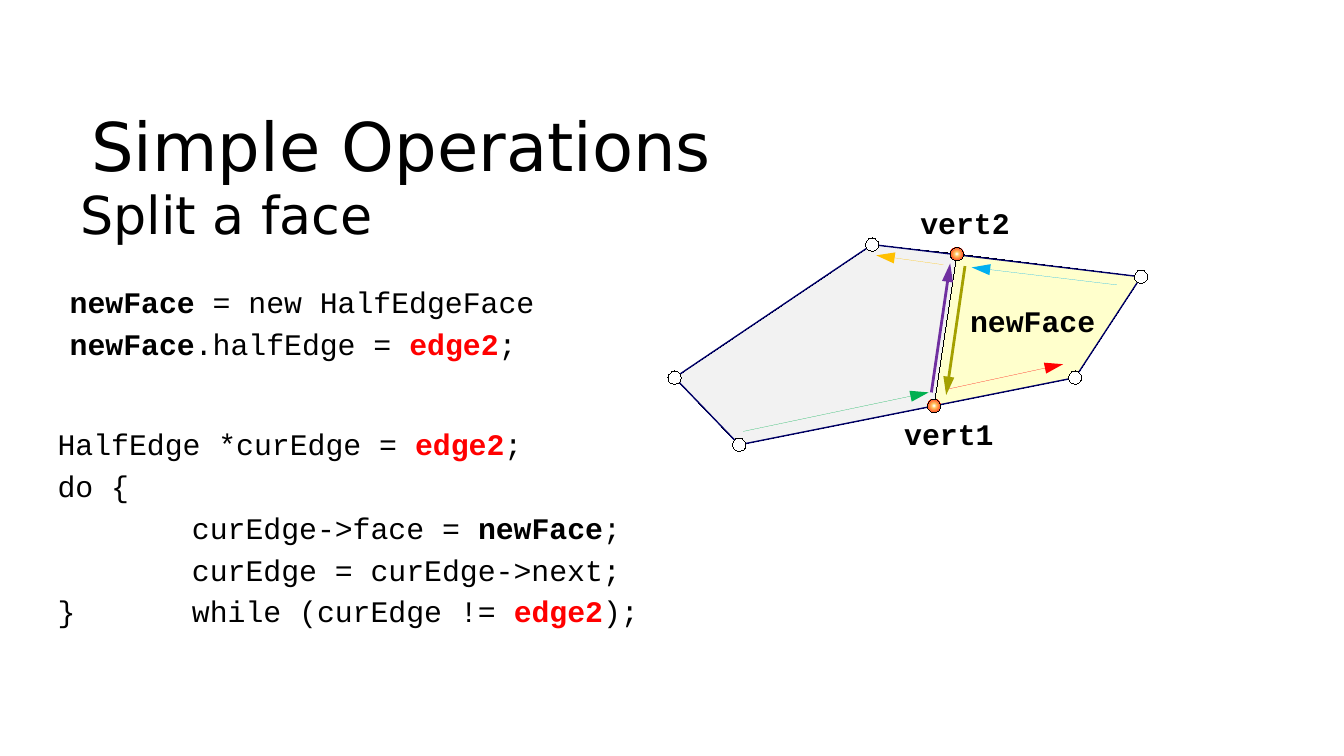
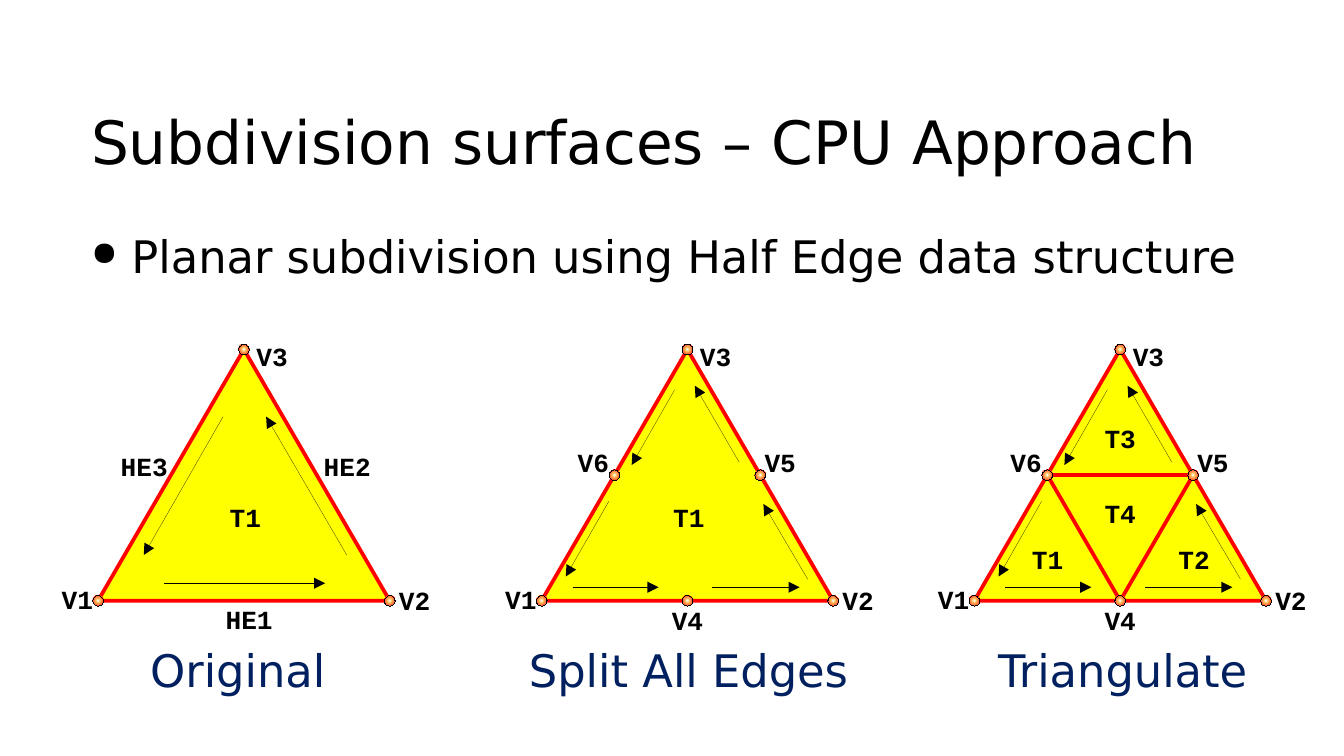
from collections import namedtuple
from dataclasses import dataclass

from lxml import etree
from pptx import Presentation
from pptx.dml.color import RGBColor
from pptx.enum.shapes import MSO_CONNECTOR, MSO_SHAPE
from pptx.enum.text import MSO_ANCHOR, MSO_AUTO_SIZE, PP_ALIGN
from pptx.oxml.ns import qn
from pptx.util import Inches, Pt

LEFT, RIGHT = PP_ALIGN.LEFT, PP_ALIGN.RIGHT
TOP = MSO_ANCHOR.TOP
FIXED, GROW = MSO_AUTO_SIZE.NONE, MSO_AUTO_SIZE.SHAPE_TO_FIT_TEXT
LINE = MSO_CONNECTOR.STRAIGHT
OVAL, TRI = MSO_SHAPE.OVAL, MSO_SHAPE.ISOSCELES_TRIANGLE

WIDTH = Inches(10)
HEIGHT = WIDTH * 9 // 16
COL = WIDTH // 100

Box = namedtuple("Box", "x y w h")


@dataclass(frozen=True)
class Theme:
    """Colours, fonts and type sizes."""
    sans: str = "DejaVu Sans"
    mono: str = "Courier New"
    ink: str = "000000"
    white: str = "FFFFFF"
    red: str = "FF0000"
    navy: str = "000066"
    blue: str = "002060"
    gray: str = "F2F2F2"
    cream: str = "FFFFCC"
    yellow: str = "FFFF00"
    green: str = "00B050"
    cyan: str = "00B0F0"
    gold: str = "FFC000"
    purple: str = "7030A0"
    olive: str = "A4A000"
    glow: tuple = ((1, "FFFFFF"), (21, "FFCC66"), (100, "FF0000"))
    title: int = 36
    long: int = 32
    head: int = 28
    body: int = 24
    code: int = 16
    tag: int = 14


T = Theme()


def sub(node, tag, **attrs):
    """Append a drawing element and return it."""
    return etree.SubElement(node, qn("a:" + tag), {k: str(v) for k, v in attrs.items()})


def shift(box, x, y, w=0, h=0):
    """Return a box set out from the corner of another."""
    return Box(box.x + x, box.y + y, w, h)


def cols(*vals):
    """Turn grid columns into lengths."""
    return [round(v * COL) for v in vals]


def rgb(hue):
    """Turn a hex string into a colour."""
    return RGBColor.from_string(hue)


def stroke(line, hue, width):
    """Set line colour and width, with zero as a hairline."""
    line.color.rgb = rgb(hue)
    node = line._get_or_add_ln()
    node.set("w", str(int(Pt(width))))
    return node


def paint(shape, fill, edge, width):
    """Set the fill and outline of a shape."""
    shape.shadow.inherit = False
    shape.fill.solid()
    shape.fill.fore_color.rgb = rgb(fill)
    stroke(shape.line, edge, width)
    return shape


def write(slide, box, lines, size, font=T.mono, color=T.ink, bold=False,
          align=LEFT, wrap=True, gap=3.2, bullet=None, tab=None):
    """Write lines, each a string or a list of (text, bold, colour) runs."""
    frame = slide.shapes.add_textbox(*cols(*box)).text_frame
    frame.word_wrap = wrap
    frame.auto_size = FIXED if wrap else GROW
    frame.vertical_anchor = TOP
    for i, line in enumerate([lines] if isinstance(lines, str) else lines):
        para = frame.paragraphs[0] if i == 0 else frame.add_paragraph()
        para.alignment = align
        if i:
            para.space_before = Pt(gap)
        props = para._p.get_or_add_pPr()
        if bullet:
            props.set("marL", str(Inches(0.3)))
            props.set("indent", str(-Inches(0.3)))
            sub(sub(props, "buClr"), "srgbClr", val=color)
            sub(props, "buSzPct", val=75000)
            sub(props, "buChar", char=bullet)
        if tab:
            sub(sub(props, "tabLst"), "tab", pos=cols(tab)[0], algn="l")
        for words, heavy, hue in [(line, bold, color)] if isinstance(line, str) else line:
            run = para.add_run()
            run.text = words
            run.font.name = font
            run.font.size = Pt(size)
            run.font.bold = heavy
            run.font.color.rgb = rgb(hue)


def tag(slide, box, words, at, size=T.tag, w=4.5):
    """Write a bold label near a part of a figure."""
    write(slide, shift(box, *at, w, 4.1), words, size, bold=True)


def head(slide, words, size):
    """Write the slide title."""
    write(slide, Box(5.8, 7.3, 88.3, 8.5), words, size, font=T.sans)


def link(slide, box, start, end, color=T.ink, width=0, tip=None):
    """Draw a line, with an arrowhead of the given length if any."""
    a, b = shift(box, *start), shift(box, *end)
    line = slide.shapes.add_connector(LINE, *cols(a.x, a.y, b.x, b.y))
    node = stroke(line.line, color, width)
    if tip:
        sub(node, "tailEnd", type="triangle", w="med", len=tip)
    sub(line._element.spPr, "effectLst")


def dot(slide, box, at, size, glow=True):
    """Draw a vertex centred on a point."""
    spot = shift(box, at[0] - size / 2, at[1] - size / 2, size, size)
    shape = paint(slide.shapes.add_shape(OVAL, *cols(*spot)), T.white, T.ink, 0)
    if glow:
        old = shape._element.spPr.find(qn("a:solidFill"))
        grad = etree.Element(qn("a:gradFill"), rotWithShape="1")
        stops = sub(grad, "gsLst")
        for pos, hue in T.glow:
            sub(sub(stops, "gs", pos=pos * 1000), "srgbClr", val=hue)
        sub(sub(grad, "path", path="circle"), "fillToRect",
            l=50000, t=50000, r=50000, b=50000)
        old.getparent().replace(old, grad)


def face(slide, box, points, fill):
    """Draw a filled polygon."""
    spots = [tuple(cols(*shift(box, *p)[:2])) for p in points]
    form = slide.shapes.build_freeform(*spots[0])
    form.add_line_segments(spots[1:], close=True)
    paint(form.convert_to_shape(), fill, T.ink, 0)


def split(slide, box):
    """Draw a polygon cut into two faces by a new edge."""
    rim = [(5, 15), (30, 10), (34.9, 2.5), (14.9, 0.1), (0.2, 10)]
    foot, low, right, top, far = rim
    vert1, vert2 = (19.5, 12.1), (21.2, 0.8)
    face(slide, box, [right, vert2, vert1, low], T.cream)
    face(slide, box, [top, far, foot, vert1, vert2], T.gray)
    for a, b in zip(rim, rim[1:] + rim[:1]):
        link(slide, box, a, b, T.navy, 0.75)
    for at in rim:
        dot(slide, box, at, 1, glow=False)
    for at in (vert1, vert2):
        dot(slide, box, at, 1)
    for a, b, hue, width in [
        ((5.3, 14), (19.1, 11.1), T.green, 0),
        ((20.3, 10.9), (29.1, 9), T.red, 0),
        ((33.1, 3.1), (22.3, 1.8), T.cyan, 0),
        ((20.2, 1.6), (15.2, 0.9), T.gold, 0),
        ((19.3, 11.1), (20.7, 1.5), T.purple, 1.5),
        ((21.8, 1.7), (20.4, 11.3), T.olive, 1.5),
    ]:
        link(slide, box, a, b, hue, width, "lg")
    for words, at in [("vert1", (16.3, 12.3)), ("vert2", (17.5, -3.4)),
                      ("newFace", (21.2, 3.9))]:
        tag(slide, box, words, at, T.code, 14.3)


def code(slide):
    """Write the two blocks of code."""
    def plain(words):
        return words, False, T.ink

    new = ("newFace", True, T.ink)
    edge = ("edge2", True, T.red)
    write(slide, Box(4.2, 20.6, 40.8, 7.5), [
        [new, plain(" = new HalfEdgeFace")],
        [new, plain(".halfEdge = "), edge, plain(";")],
    ], T.code)
    write(slide, Box(3.3, 31.2, 60.8, 20.2), [
        [plain("HalfEdge *curEdge = "), edge, plain(";")],
        "do {",
        [plain("\tcurEdge->face = "), new, plain(";")],
        "\tcurEdge = curEdge->next;",
        [plain("}\twhile (curEdge != "), edge, plain(");")],
    ], T.code, tab=10)


def mesh(slide, box, name, place, tags, arrows, mids=False, inner=False):
    """Draw one stage of the subdivided triangle with its caption."""
    w, h = box.w, box.h
    paint(slide.shapes.add_shape(TRI, *cols(*box)), T.yellow, T.red, 2)
    if inner:
        core = shift(box, w / 4, h / 2, w / 2, h / 2)
        shape = slide.shapes.add_shape(TRI, *cols(*core))
        paint(shape, T.yellow, T.red, 2).rotation = 180
    for a, b in arrows:
        link(slide, box, a, b, tip="med")
    spots = [(0, h), (w, h), (w / 2, 0)]
    if mids:
        spots += [(w / 2, h), (w * 3 / 4, h / 2), (w / 4, h / 2)]
    for at in spots:
        dot(slide, box, at, 0.8)
    ends = {"V1": (-3.7, 16.9), "V2": (21.4, 17), "V3": (10.8, -1.2)}
    for words, at in {**ends, **tags}.items():
        tag(slide, box, words, at, w=6.2 if len(words) > 2 else 4.5)
    left, wide = place
    write(slide, shift(box, left, 21.3, wide, 5), name, T.body, font=T.sans,
          color=T.blue, align=RIGHT, wrap=False)


def stages(slide):
    """Draw the three stages of subdivision."""
    whole = [((4.9, 17.4), (16.9, 17.4)), ((18.5, 15.3), (12.5, 5)),
             ((9.3, 5), (3.4, 15.3))]
    halves = [((2.3, 17.7), (8.7, 17.7)), ((12.7, 17.7), (19.2, 17.7)),
              ((19.8, 17.1), (16.5, 11.5)), ((14.7, 8.4), (11.4, 2.7)),
              ((5, 11.3), (1.8, 16.9)), ((9.9, 3), (6.7, 8.6))]
    sides = {"HE1": (8.5, 18.4), "HE2": (15.8, 7), "HE3": (0.7, 7)}
    mids = {"V4": (8.7, 18.5), "V5": (15.6, 6.7), "V6": (1.7, 6.7)}
    one = {"T1": (8.8, 10.8)}
    four = {"T1": (3.3, 13.9), "T2": (14.2, 13.9), "T3": (8.7, 4.9), "T4": (8.7, 10.5)}
    first, second, third = [Box(x, 26, 21.7, 18.7) for x in (7.3, 40.3, 72.5)]
    mesh(slide, first, "Original", (2.8, 15.1), {**sides, **one}, whole)
    mesh(slide, second, "Split All Edges", (-2.4, 26.2), {**mids, **one}, halves, mids=True)
    mesh(slide, third, "Triangulate", (0.5, 20.8), {**mids, **four}, halves,
         mids=True, inner=True)


def cut(slide):
    """Build the slide on splitting a face."""
    head(slide, "Simple Operations", T.title)
    write(slide, Box(5, 13.1, 88.3, 7.5), "Split a face", T.head, font=T.sans)
    split(slide, Box(50, 18.1, 35, 15))
    code(slide)


def refine(slide):
    """Build the slide on subdivision."""
    head(slide, "Subdivision surfaces – CPU Approach", T.long)
    write(slide, Box(5.8, 16.5, 88.3, 30), "Planar subdivision using Half Edge data structure",
          T.body, font=T.sans, bullet="●")
    stages(slide)


def main():
    """Build and save the deck."""
    deck = Presentation()
    deck.slide_width, deck.slide_height = WIDTH, HEIGHT
    for build in (cut, refine):
        build(deck.slides.add_slide(deck.slide_layouts[6]))
    deck.save("out.pptx")


if __name__ == "__main__":
    main()
